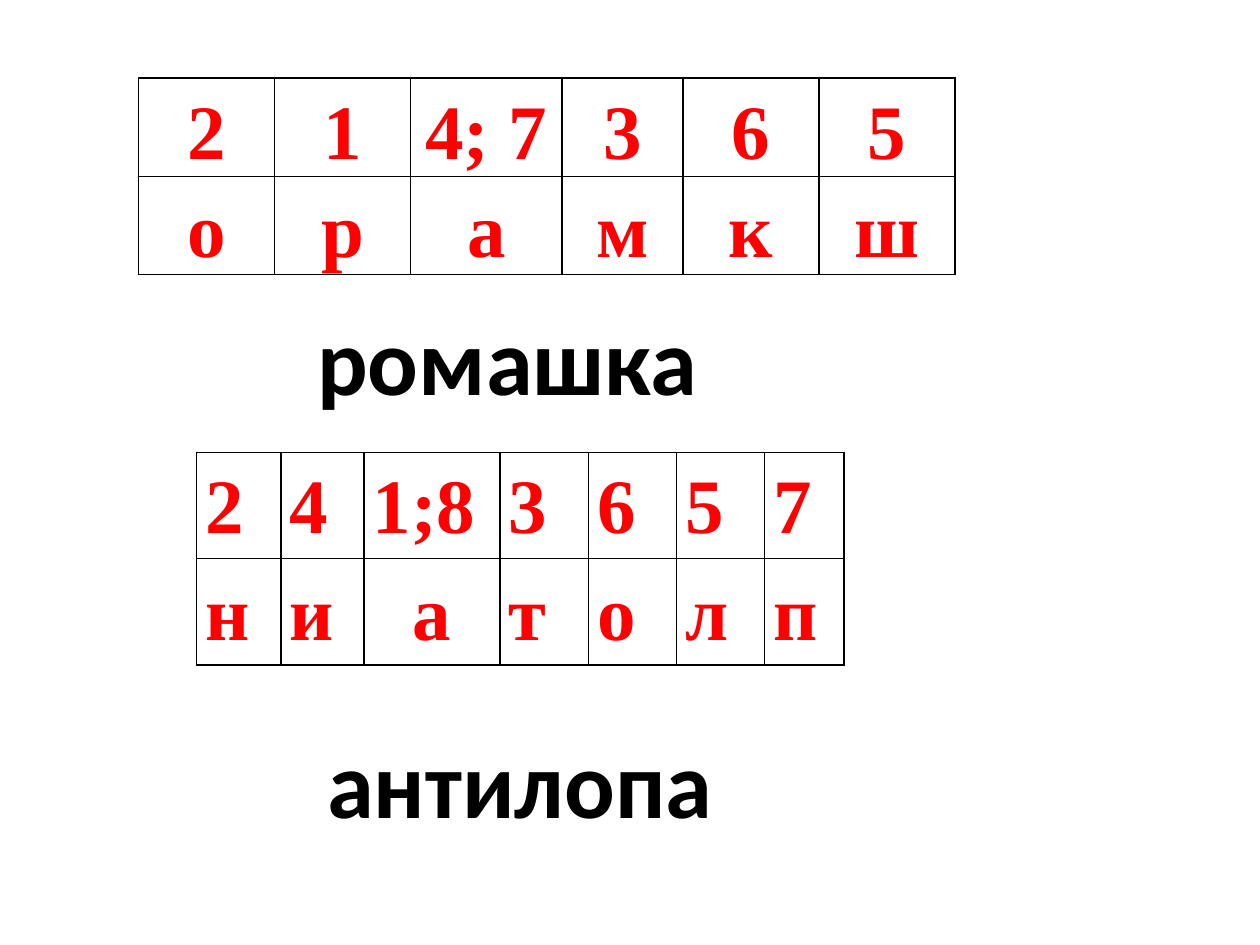
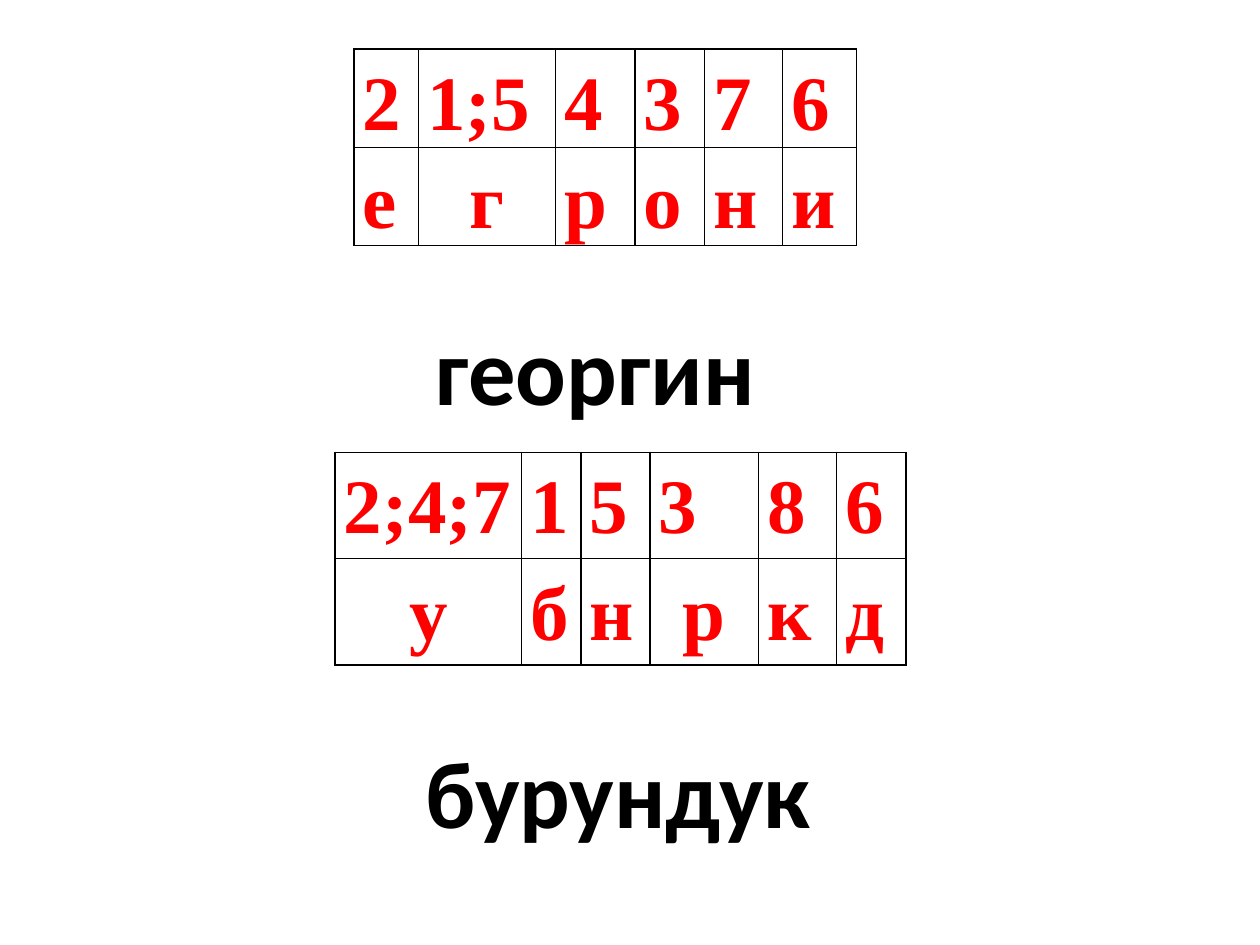
from lxml import etree
from pptx import Presentation
from pptx.dml.color import RGBColor
from pptx.enum.text import MSO_AUTO_SIZE, PP_ALIGN
from pptx.oxml.ns import qn
from pptx.util import Inches, Pt

LEFT, CENTER = PP_ALIGN.LEFT, PP_ALIGN.CENTER
FIT_SHAPE = MSO_AUTO_SIZE.SHAPE_TO_FIT_TEXT

RED, BLACK, WHITE = "FF0000", "000000", "FFFFFF"
CELL_FORMAT = dict(font="Times New Roman", size=44, color=RED)
ANSWER_FORMAT = dict(font="Calibri", size=54, color=BLACK)
LINE_SPACING = 1.15
TIGHT_SPACING = Pt(56)  # fixed, so that the rows keep their height
ANSWER_HEIGHT = 1.01
CELL_MARGIN = 0.07

# Each puzzle: numbers give the places of the letters in the answer.
# "centered" lists the texts that are centred in their cells.
SLIDES = [
    [
        dict(
            numbers=["2", "1", "4; 7", "3", "6", "5"], letters="орамкш",
            centered=["2", "1", "4; 7", "3", "6", "5", *"орамкш"],
            table_at=(1.1, 0.62), row_height=0.78, line_spacing=LINE_SPACING,
            widths=[1.08, 1.08, 1.2, 0.96, 1.08, 1.08],
            answer="ромашка", answer_box=(2.42, 2.34, 3.25, ANSWER_HEIGHT),
        ),
        dict(
            numbers=["2", "4", "1;8", "3", "6", "5", "7"], letters="ниатолп",
            centered=["а"],
            table_at=(1.56, 3.59), row_height=0.84, line_spacing=LINE_SPACING,
            widths=[0.67, 0.66, 1.08, 0.7, 0.7, 0.7, 0.63],
            answer="антилопа", answer_box=(2.5, 5.7, 3.29, ANSWER_HEIGHT),
        ),
    ],
    [
        dict(
            numbers=["2", "1;5", "4", "3", "7", "6"], letters="егрони",
            centered=["г"],
            table_at=(2.81, 0.39), row_height=0.78, line_spacing=TIGHT_SPACING,
            widths=[0.51, 1.09, 0.63, 0.55, 0.62, 0.59],
            answer="георгин", answer_box=(3.36, 2.42, 2.76, ANSWER_HEIGHT),
        ),
        dict(
            numbers=["2;4;7", "1", "5", "3", "8", "6"], letters="убнркд",
            centered=["у", "р"],
            table_at=(2.66, 3.59), row_height=0.84, line_spacing=LINE_SPACING,
            widths=[1.48, 0.47, 0.55, 0.86, 0.62, 0.55],
            answer="бурундук", answer_box=(3.28, 5.78, 3.29, ANSWER_HEIGHT),
        ),
    ],
]


def rgb(value):
    return RGBColor.from_string(value)


def write_text(text_frame, text, font, size, color, align=LEFT, line_spacing=None):
    paragraph = text_frame.paragraphs[0]
    paragraph.alignment = align
    paragraph.line_spacing = line_spacing
    run = paragraph.add_run()
    run.text = text
    run.font.name = font
    run.font.size = Pt(size)
    run.font.bold = True
    run.font.color.rgb = rgb(color)


def add_borders(cell, color=BLACK, width=1):
    properties = cell._tc.get_or_add_tcPr()
    for index, side in enumerate(("a:lnL", "a:lnR", "a:lnT", "a:lnB")):
        line = etree.Element(qn(side), w=str(Pt(width)))
        fill = etree.SubElement(line, qn("a:solidFill"))
        etree.SubElement(fill, qn("a:srgbClr"), val=color)
        properties.insert(index, line)  # borders come before the fill


def add_cipher_table(slide, puzzle):
    left, top = puzzle["table_at"]
    widths, row_height = puzzle["widths"], puzzle["row_height"]
    rows = [puzzle["numbers"], puzzle["letters"]]
    frame = slide.shapes.add_table(
        len(rows), len(widths), Inches(left), Inches(top),
        Inches(sum(widths)), Inches(row_height * len(rows)))
    table = frame.table
    table.first_row = table.horz_banding = False
    for column, width in zip(table.columns, widths):
        column.width = Inches(width)
    for row, texts in zip(table.rows, rows):
        row.height = Inches(row_height)
        for cell, text in zip(row.cells, texts):
            cell.margin_left = cell.margin_right = Inches(CELL_MARGIN)
            cell.margin_top = cell.margin_bottom = 0
            cell.fill.background()
            add_borders(cell)
            align = CENTER if text in puzzle["centered"] else LEFT
            write_text(cell.text_frame, text, align=align,
                       line_spacing=puzzle["line_spacing"], **CELL_FORMAT)


def add_answer(slide, box, text):
    shape = slide.shapes.add_textbox(*map(Inches, box))
    shape.text_frame.word_wrap = False
    shape.text_frame.auto_size = FIT_SHAPE
    write_text(shape.text_frame, text, **ANSWER_FORMAT)


def add_puzzle_slide(presentation, puzzles):
    slide = presentation.slides.add_slide(presentation.slide_layouts[6])
    slide.background.fill.solid()
    slide.background.fill.fore_color.rgb = rgb(WHITE)
    for puzzle in puzzles:
        add_cipher_table(slide, puzzle)
        add_answer(slide, puzzle["answer_box"], puzzle["answer"])


def main():
    presentation = Presentation()
    presentation.slide_width = Inches(10)
    presentation.slide_height = Inches(7.5)
    for puzzles in SLIDES:
        add_puzzle_slide(presentation, puzzles)
    presentation.save("out.pptx")


if __name__ == "__main__":
    main()
